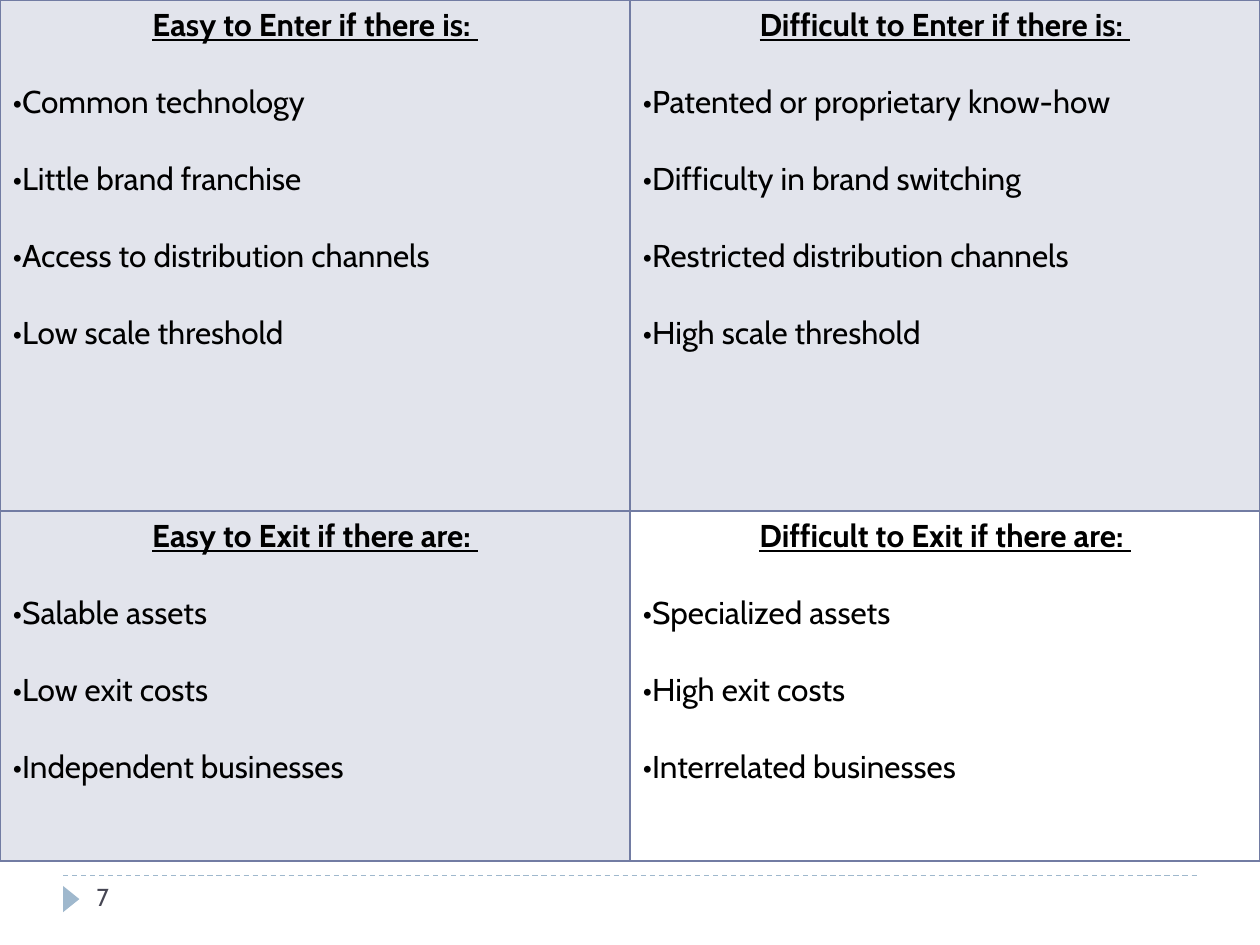
from dataclasses import dataclass

from lxml import etree
from pptx import Presentation
from pptx.dml.color import RGBColor
from pptx.enum.dml import MSO_LINE
from pptx.enum.shapes import MSO_CONNECTOR, MSO_SHAPE
from pptx.enum.text import PP_ALIGN
from pptx.oxml.ns import qn
from pptx.util import Cm, Pt

DASH = MSO_LINE.DASH
STRAIGHT = MSO_CONNECTOR.STRAIGHT
TRIANGLE = MSO_SHAPE.ISOSCELES_TRIANGLE
CENTER = PP_ALIGN.CENTER


@dataclass(frozen=True)
class Theme:
    font: str = "Cabin"
    text: str = "000000"
    muted: str = "464653"
    accent: str = "727CA3"
    footer: str = "9FB8CD"
    body_size: int = 18
    number_size: int = 14
    line_gap: int = 22
    tint: int = 20


QUADRANTS = [
    [
        ("Easy to Enter if there is: ",
         ["Common technology", "Little brand franchise",
          "Access to distribution channels", "Low scale threshold"], True),
        ("Difficult to Enter if there is: ",
         ["Patented or proprietary know-how", "Difficulty in brand switching",
          "Restricted distribution channels", "High scale threshold"], True),
    ],
    [
        ("Easy to Exit if there are: ",
         ["Salable assets", "Low exit costs", "Independent businesses"], True),
        ("Difficult to Exit if there are: ",
         ["Specialized assets", "High exit costs", "Interrelated businesses"], False),
    ],
]


class SlideBuilder:
    def __init__(self, slide, theme):
        self.s = slide
        self.theme = theme

    def style(self, p, size, color, bold=False):
        """Set the font of a paragraph; bold headings are also underlined."""
        p.font.name = self.theme.font
        p.font.size = Pt(size)
        p.font.color.rgb = RGBColor.from_string(color)
        p.font.bold = p.font.underline = bold

    def dashed_line(self, x1, x2, y):
        line = self.s.shapes.add_connector(STRAIGHT, Cm(x1), Cm(y), Cm(x2), Cm(y))
        line.line.color.rgb = RGBColor.from_string(self.theme.footer)
        line.line.width = Pt(0.75)
        line.line.dash_style = DASH
        etree.SubElement(line._element.spPr, qn("a:effectLst"))

    def marker(self, x, y, w, h):
        """Add a triangle that points right."""
        sp = self.s.shapes.add_shape(TRIANGLE, Cm(x), Cm(y), Cm(w), Cm(h))
        sp.rotation = 90
        sp.shadow.inherit = False
        sp.fill.solid()
        sp.fill.fore_color.rgb = RGBColor.from_string(self.theme.footer)
        sp.line.fill.background()

    def page_number(self, text, x, y, w, h):
        tf = self.s.shapes.add_textbox(Cm(x), Cm(y), Cm(w), Cm(h)).text_frame
        tf.word_wrap = True
        p = tf.paragraphs[0]
        p.text = text
        self.style(p, self.theme.number_size, self.theme.muted)

    def table(self, rows, widths, heights):
        table = self.s.shapes.add_table(
            len(heights), len(widths), 0, 0, Cm(sum(widths)), Cm(sum(heights))).table
        table.first_row = table.horz_banding = False
        for column, width in zip(table.columns, widths):
            column.width = Cm(width)
        for row, height, quadrants in zip(table.rows, heights, rows):
            row.height = Cm(height)
            for cell, (heading, items, tinted) in zip(row.cells, quadrants):
                self.cell_text(cell, heading, items)
                self.cell_fill(cell, tinted)
                self.cell_borders(cell)

    def cell_text(self, cell, heading, items):
        tf = cell.text_frame
        p = tf.paragraphs[0]
        p.text = heading
        p.alignment = CENTER
        self.style(p, self.theme.body_size, self.theme.text, bold=True)
        for item in items:
            p = tf.add_paragraph()
            p.text = item
            p.space_before = Pt(self.theme.line_gap)
            self.style(p, self.theme.body_size, self.theme.text)
            self.bullet(p)

    def bullet(self, p):
        pPr = p._p.get_or_add_pPr()
        pPr.set("marL", "0")
        pPr.set("indent", "0")
        defaults = pPr.find(qn("a:defRPr"))
        defaults.addprevious(etree.Element(qn("a:buFont"), typeface=self.theme.font))
        defaults.addprevious(etree.Element(qn("a:buChar"), char="•"))

    def cell_fill(self, cell, tinted):
        if not tinted:
            cell.fill.background()
            return
        cell.fill.solid()
        cell.fill.fore_color.rgb = RGBColor.from_string(self.theme.accent)
        color = cell._tc.tcPr.find(".//" + qn("a:srgbClr"))
        etree.SubElement(color, qn("a:alpha"), val=str(self.theme.tint * 1000))

    def cell_borders(self, cell):
        tcPr = cell._tc.get_or_add_tcPr()
        for i, side in enumerate("LRTB"):
            ln = etree.Element(qn(f"a:ln{side}"), w=str(Pt(1)))
            fill = etree.SubElement(ln, qn("a:solidFill"))
            etree.SubElement(fill, qn("a:srgbClr"), val=self.theme.accent)
            tcPr.insert(i, ln)


def main():
    prs = Presentation()
    prs.slide_width, prs.slide_height = Cm(25.4), Cm(19.05)
    slide = SlideBuilder(prs.slides.add_slide(prs.slide_layouts[6]), Theme())
    slide.dashed_line(1.27, 24.13, 17.65)
    slide.marker(1.17, 17.96, 0.53, 0.33)
    slide.table(QUADRANTS, widths=[12.7, 12.7], heights=[10.3, 7.06])
    slide.page_number("7", 1.7, 17.65, 5.5, 1.02)
    prs.save("out.pptx")


if __name__ == "__main__":
    main()
